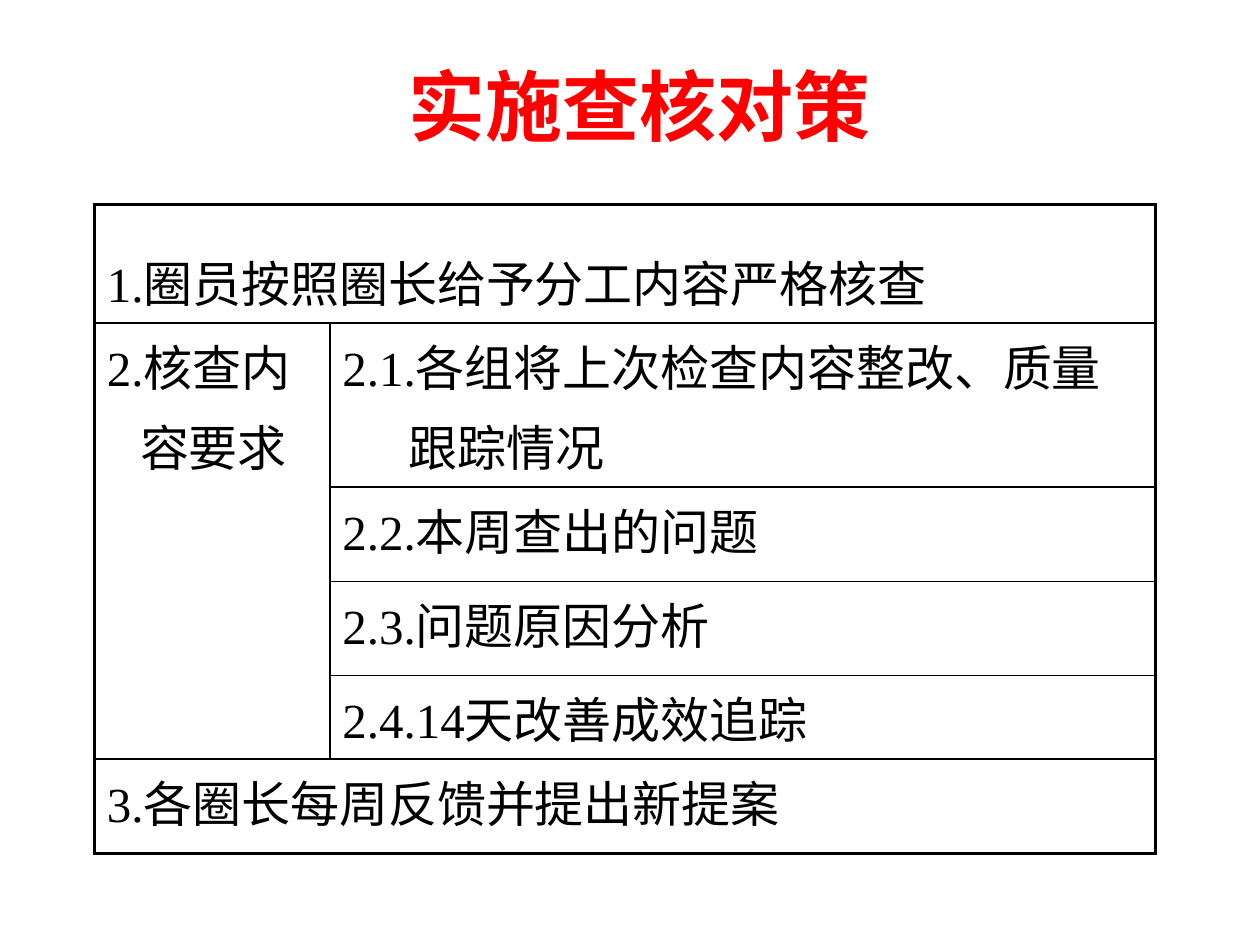
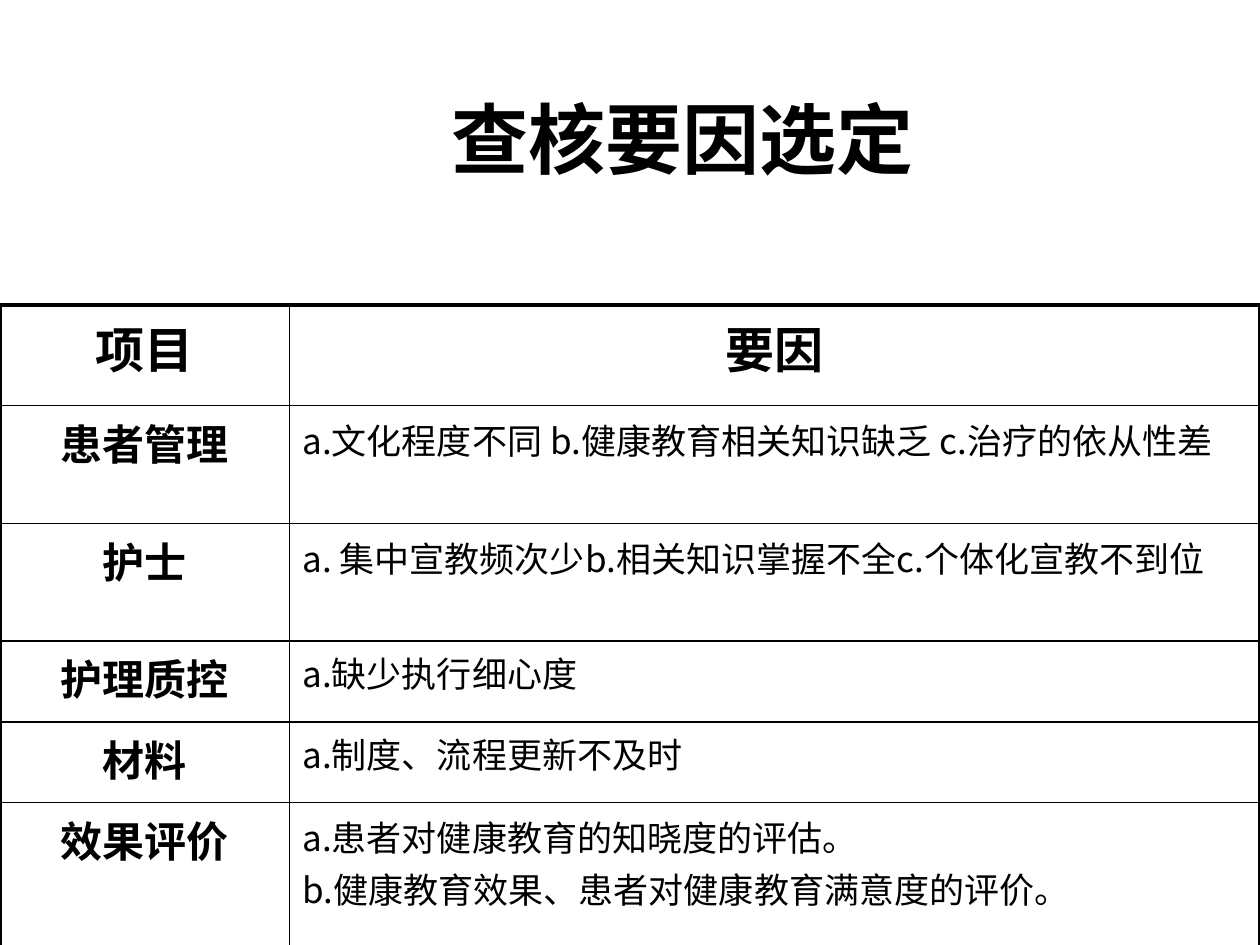
from lxml.etree import SubElement as Sub
from pptx import Presentation
from pptx.dml.color import RGBColor
from pptx.enum.text import MSO_ANCHOR as Anchor, PP_ALIGN as Align
from pptx.oxml.ns import qn
from pptx.util import Cm, Pt

RED = RGBColor(0xFF, 0x00, 0x00)
BLACK = RGBColor(0x00, 0x00, 0x00)
WHITE = RGBColor(0xFF, 0xFF, 0xFF)
SERIF = "Times New Roman"
SANS = "Noto Sans CJK SC"
THICK, THIN = Pt(2.25), Pt(1)

CHECKS = ["2.1.各组将上次检查内容整改、质量\n跟踪情况", "2.2.本周查出的问题",
          "2.3.问题原因分析", "2.4.14天改善成效追踪"]

# Item, its causes, and whether the lines have a fixed 30 pt pitch
CAUSES = [
    ("患者管理", "a.文化程度不同 b.健康教育相关知识缺乏 c.治疗的依从性差", True),
    ("护士", "a. 集中宣教频次少b.相关知识掌握不全c.个体化宣教不到位", True),
    ("护理质控", "a.缺少执行细心度", False),
    ("材料", "a.制度、流程更新不及时", False),
    ("效果评价", "a.患者对健康教育的知晓度的评估。\n"
             "b.健康教育效果、患者对健康教育满意度的评价。", True),
]


def style(para, size, face=SERIF, bold=False, color=BLACK, align=Align.LEFT):
    para.alignment = align
    font = para.font
    font.size, font.name, font.bold = Pt(size), face, bold
    font.color.rgb = color
    Sub(para._p.pPr.find(qn("a:defRPr")), qn("a:ea"), typeface=SANS)


def put(cell, text, size, pitch=None, gap=0, indent=0, **look):
    """Write lines into a cell; lines after the first take gap and indent."""
    cell.text_frame.text = text
    for i, para in enumerate(cell.text_frame.paragraphs):
        if i and indent:
            para._p.get_or_add_pPr().set("marL", str(Cm(indent)))
        if i and gap:
            para.space_before = Pt(gap)
        if pitch:
            para.line_spacing = pitch
        style(para, size, **look)


def rule(cell, sides):
    props = cell._tc.get_or_add_tcPr()
    for tag, outer in sides:
        line = Sub(props, qn("a:" + tag), w=str(THICK if outer else THIN))
        Sub(Sub(line, qn("a:solidFill")), qn("a:srgbClr"), val=str(BLACK))


def grid(slide, left, top, cols, rows, merges=()):
    """Add a ruled table with a thick frame and thin inner lines."""
    high, wide = len(rows), len(cols)
    table = slide.shapes.add_table(high, wide, Cm(left), Cm(top),
                                   Cm(sum(cols)), Cm(sum(rows))).table
    table.first_row = table.horz_banding = False
    for col, width in zip(table.columns, cols):
        col.width = Cm(width)
    for row, height in zip(table.rows, rows):
        row.height = Cm(height)
    for (r, c), (r2, c2) in merges:
        table.cell(r, c).merge(table.cell(r2, c2))
    for r in range(high):
        for c in range(wide):
            cell = table.cell(r, c)
            end_r, end_c = r + cell.span_height, c + cell.span_width
            rule(cell, [("lnL", c == 0), ("lnR", end_c == wide),
                        ("lnT", r == 0), ("lnB", end_r == high)])
            cell.fill.solid()
            cell.fill.fore_color.rgb = WHITE
    return table


def page(deck, text, left, top, **look):
    """Add a slide with its title."""
    slide = deck.slides.add_slide(deck.slide_layouts[5])
    title = slide.shapes.title
    title.left, title.top = Cm(left), Cm(top)
    title.width, title.height = Cm(21.6), Cm(3.17)
    title.text_frame.text = text
    title.text_frame.vertical_anchor = Anchor.MIDDLE
    style(title.text_frame.paragraphs[0], 44, bold=True,
          align=Align.CENTER, **look)
    return slide


def plan(deck):
    slide = page(deck, "实施查核对策", 2.1, 0.53, color=RED)
    table = grid(slide, 1.9, 4.12, [4.75, 16.65],
                 [2.03, 2.57, 1.9, 1.9, 0.5, 1.9],
                 [((0, 0), (0, 1)), ((1, 0), (4, 0)), ((5, 0), (5, 1))])
    put(table.cell(0, 0), "1.圈员按照圈长给予分工内容严格核查", 28, pitch=1.5)
    put(table.cell(1, 0), "2.核查内\n容要求", 28, gap=5.6, indent=0.67)
    for r, text in enumerate(CHECKS, 1):
        put(table.cell(r, 1), text, 28, gap=5.6, indent=1.33)
    put(table.cell(5, 0), "3.各圈长每周反馈并提出新提案", 28)


def causes(deck):
    slide = page(deck, "查核要因选定", 2.97, 1.2, face=SANS)
    table = grid(slide, 0, 6.15, [5.84, 19.56], [2.03] + [1.63] * 4 + [3.02])
    head = dict(bold=True, align=Align.CENTER)
    for c, text in enumerate(["项目", "要因"]):
        put(table.cell(0, c), text, 28, **head)
    for r, (item, text, fixed) in enumerate(CAUSES, 1):
        put(table.cell(r, 0), item, 24, **head)
        put(table.cell(r, 1), text, 20, face=SANS,
            pitch=Pt(30) if fixed else None)


def main():
    deck = Presentation()
    deck.slide_width, deck.slide_height = Cm(25.4), Cm(19.05)
    plan(deck)
    causes(deck)
    deck.save("out.pptx")


if __name__ == "__main__":
    main()
